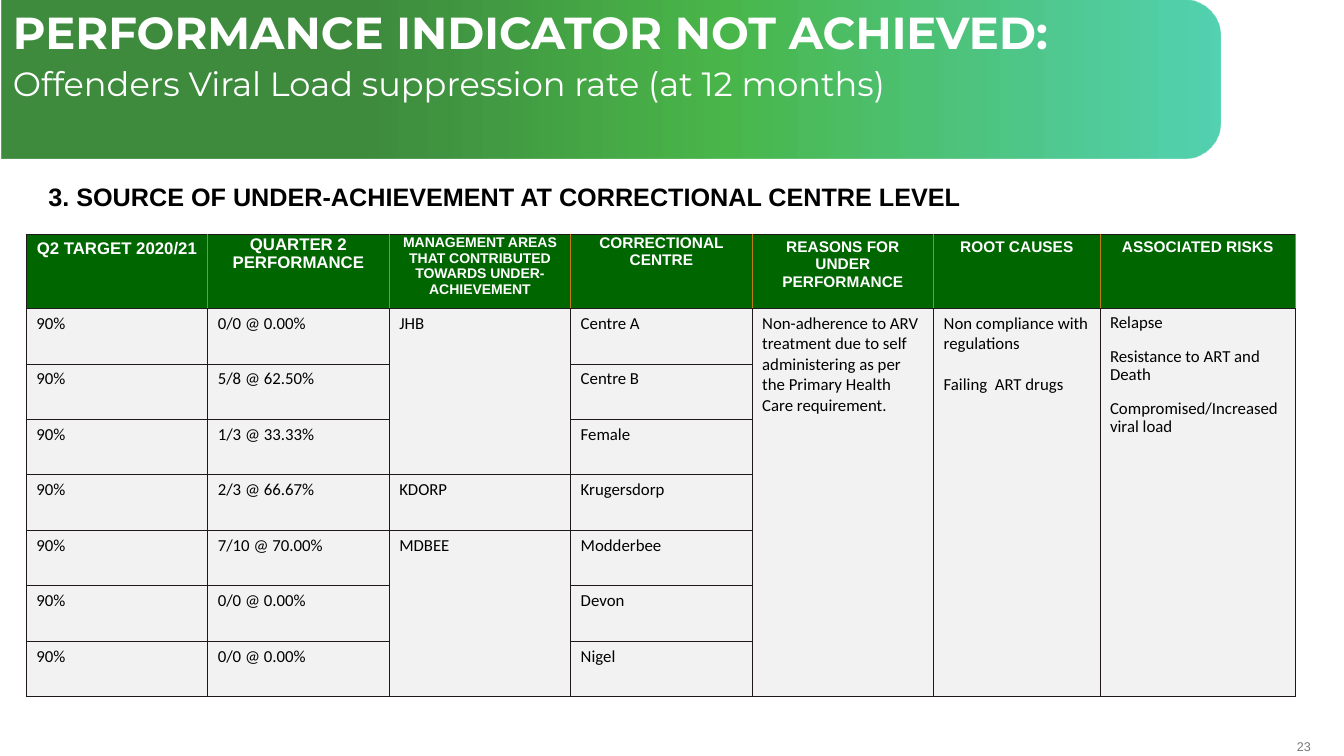
from pptx import Presentation, oxml
from pptx import util as u
from pptx.dml import color
from pptx.enum import shapes, text
from pptx.oxml import ns

HUES = {"head": "006600", "cell": "F2F2F2", "edge": "1E1918", "split": "BF7B17",
        "white": "FFFFFF", "black": "000000", "grey": "77787B"}
STOPS = [(30, "006600", 75), (59, "009900", 71), (100, "00BC8D", 67)]
COLS = [1.8, 1.8, 1.8, 1.8, 1.8, 1.65, 1.94]
ROWS = [0.74] + [0.55] * 7
TIGHT = {"margin_left": 0.01, "margin_top": 0.01, "margin_right": 0.01, "margin_bottom": 0}
HEADS = [
    (["Q2 TARGET 2020/21"], 12, {}),
    (["QUARTER 2", "PERFORMANCE"], 12, TIGHT),
    (["MANAGEMENT AREAS THAT CONTRIBUTED TOWARDS UNDER-ACHIEVEMENT"], 10, TIGHT),
    (["CORRECTIONAL CENTRE"], 11, TIGHT),
    (["REASONS FOR UNDER", "PERFORMANCE"], 11, {}),
    (["ROOT CAUSES"], 11, {}),
    (["ASSOCIATED RISKS"], 11, {}),
]
RATES = ["0/0 @ 0.00%", "5/8 @ 62.50%", "1/3 @ 33.33%", "2/3 @ 66.67%",
         "7/10 @ 70.00%", "0/0 @ 0.00%", "0/0 @ 0.00%"]
SITES = ["Centre A", "Centre B", "Female", "Krugersdorp", "Modderbee", "Devon", "Nigel"]
AREAS = [(1, 3, "JHB"), (4, 1, "KDORP"), (5, 3, "MDBEE")]
NOTES = [
    (["Non-adherence to ARV treatment due to self administering as per "
      "the Primary Health Care requirement."], {}, 0),
    (["Non compliance with regulations", "Failing  ART drugs"], {}, 14.65),
    (["Relapse", "Resistance to ART and Death", "Compromised/Increased viral load"],
     {"line_spacing": 0.9}, 11),
]


def tint(name):
    """Return the named colour."""
    return color.RGBColor.from_string(HUES[name])


def put(obj, vals):
    """Set attributes from a dict."""
    for key, val in vals.items():
        setattr(obj, key, val)


def write(frame, lines, size, hue="black", face="Calibri", bold=False, form={}, gap=0):
    """Fill a frame with one paragraph for each line."""
    for n, line in enumerate(lines):
        para = frame.paragraphs[0] if n == 0 else frame.add_paragraph()
        put(para, form)
        if n and gap:
            para.space_before = u.Pt(gap)
        run = para.add_run()
        run.text = line
        put(run.font, {"size": u.Pt(size), "name": face, "bold": bold})
        run.font.color.rgb = tint(hue)


def frame(slide, box, **vals):
    """Add a wrapped text box and return its frame."""
    area = slide.shapes.add_textbox(*map(u.Inches, box)).text_frame
    put(area, {"word_wrap": True, **vals})
    return area


def banner(slide, box):
    """Draw the gradient banner with its two title lines."""
    left, top, wide, high = box
    turn = (left + (wide - high) / 2, top + (high - wide) / 2, high, wide)
    bar = slide.shapes.add_shape(shapes.MSO_SHAPE.ROUND_2_SAME_RECTANGLE, *map(u.Inches, turn))
    bar.rotation = 90
    bar.shadow.inherit = False
    bar.adjustments[0] = 0.233
    bar.adjustments[1] = 0
    bar.line.fill.background()
    bar.fill.gradient()
    bar.fill.gradient_angle = 90
    stops = "".join(
        f'<a:gs pos="{pos * 1000}"><a:srgbClr val="{hue}">'
        f'<a:alpha val="{solid * 1000}"/></a:srgbClr></a:gs>' for pos, hue, solid in STOPS)
    old = bar._element.spPr.find(".//" + ns.qn("a:gsLst"))
    old.getparent().replace(
        old, oxml.parse_xml(f'<a:gsLst {ns.nsdecls("a")}>{stops}</a:gsLst>'))
    title = frame(slide, (left + 0.01, top + 0.06, wide - 0.1, 0.57))
    write(title, ["PERFORMANCE INDICATOR NOT ACHIEVED:"], 32, "white", "Montserrat", True,
          {"line_spacing": 0.9, "space_after": u.Pt(6)})
    title.add_paragraph()
    para = title.paragraphs[1]
    para.line_spacing = 0.9
    run = para.add_run()
    run.text = "Offenders Viral Load suppression rate (at 12 months)"
    put(run.font, {"size": u.Pt(24), "name": "Montserrat", "bold": False})
    run.font.color.rgb = tint("white")


def style(cell, fill, sides):
    """Give a cell its borders and fill."""
    props = cell._tc.get_or_add_tcPr()
    for side, hue in sides.items():
        props.append(oxml.parse_xml(
            f'<a:ln{side} {ns.nsdecls("a")} w="6350"><a:solidFill>'
            f'<a:srgbClr val="{HUES[hue]}"/></a:solidFill></a:ln{side}>'))
    cell.fill.solid()
    cell.fill.fore_color.rgb = tint(fill)


def table(slide, box):
    """Build the table of under-achieving centres."""
    grid = slide.shapes.add_table(len(ROWS), len(COLS), *map(u.Inches, box)).table
    for col, wide in zip(grid.columns, COLS):
        col.width = u.Inches(wide)
    for row, high in zip(grid.rows, ROWS):
        row.height = u.Inches(high)
    for r in range(len(ROWS)):
        for c in range(len(COLS)):
            sides = dict.fromkeys("LRTB", "edge")
            if r == 0:
                sides["R"] = "split"
                sides["L"] = "split" if c else "edge"
            style(grid.cell(r, c), "cell" if r else "head", sides)
    for c, (lines, size, pads) in enumerate(HEADS):
        cell = grid.cell(0, c)
        put(cell, {key: u.Inches(val) for key, val in pads.items()})
        write(cell.text_frame, lines, size, "white", "Arial", True,
              {"alignment": text.PP_ALIGN.CENTER})
    for r, (rate, site) in enumerate(zip(RATES, SITES), 1):
        for c, word in ((0, "90%"), (1, rate), (3, site)):
            write(grid.cell(r, c).text_frame, [word], 12)
    for r, span, area in AREAS:
        if span > 1:
            grid.cell(r, 2).merge(grid.cell(r + span - 1, 2))
        write(grid.cell(r, 2).text_frame, [area], 12)
    for c, (lines, form, gap) in enumerate(NOTES, 4):
        grid.cell(1, c).merge(grid.cell(len(RATES), c))
        write(grid.cell(1, c).text_frame, lines, 12, form=form, gap=gap)


def heading(slide, box):
    """Write the section heading."""
    area = frame(slide, box, margin_left=u.Inches(0.45))
    write(area, ["3. SOURCE OF UNDER-ACHIEVEMENT AT CORRECTIONAL CENTRE LEVEL"],
          18, face="Arial", bold=True)


def folio(slide, box):
    """Write the page number."""
    area = frame(slide, box, vertical_anchor=text.MSO_ANCHOR.MIDDLE,
                 **dict.fromkeys(TIGHT, 0))
    write(area, ["23"], 9, "grey", "Arial", form={"alignment": text.PP_ALIGN.RIGHT})


def main():
    """Build and save the slide."""
    deck = Presentation()
    put(deck, {"slide_width": u.Inches(13.33), "slide_height": u.Inches(7.5)})
    slide = deck.slides.add_slide(deck.slide_layouts[6])
    folio(slide, (12.61, 7.33, 0.39, 0.15))
    banner(slide, (0.02, 0, 12.08, 1.57))
    heading(slide, (0.03, 1.75, 10, 0.4))
    table(slide, (0.26, 2.32, sum(COLS), sum(ROWS)))
    deck.save("out.pptx")


if __name__ == "__main__":
    main()
